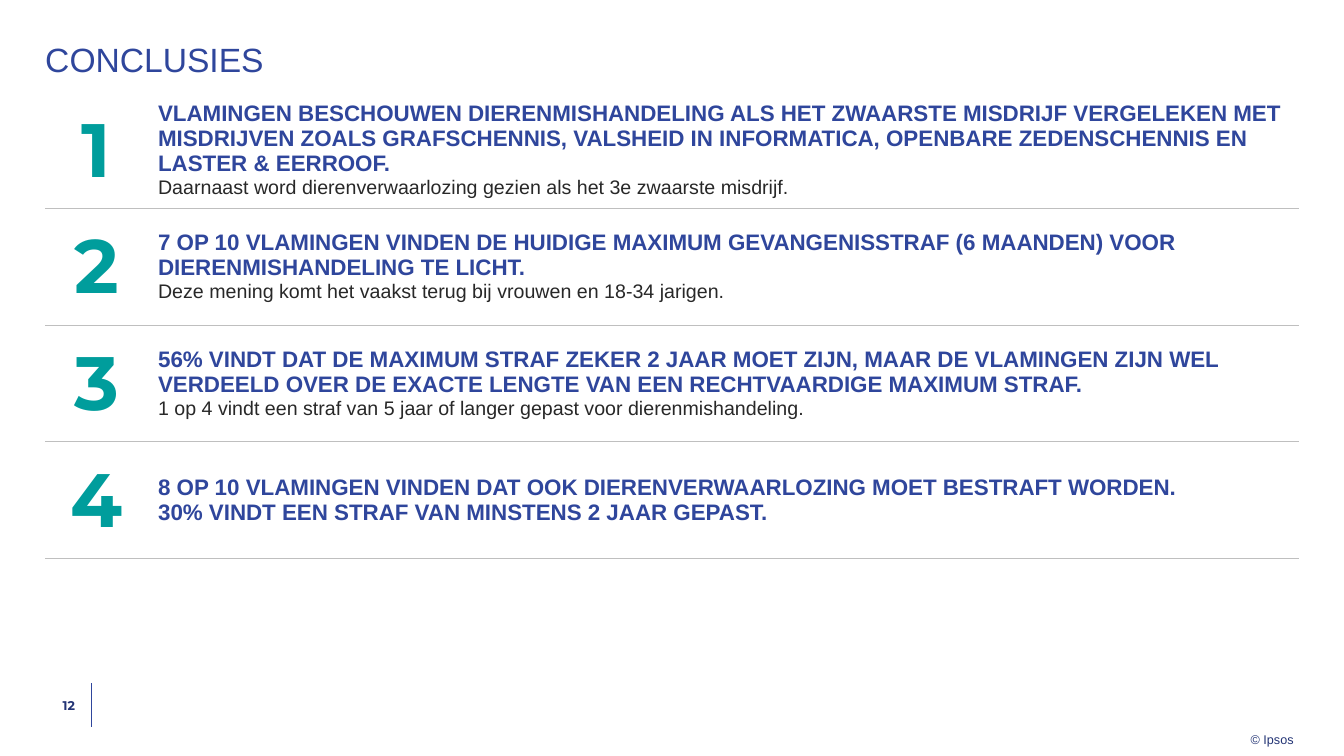
"""Build the conclusions slide: a title, four numbered findings and a footer."""
from dataclasses import dataclass

from lxml import etree
from pptx import Presentation
from pptx.dml.color import RGBColor
from pptx.enum.shapes import MSO_CONNECTOR as Connector
from pptx.enum.text import MSO_ANCHOR as Anchor, PP_ALIGN as Align
from pptx.oxml import parse_xml
from pptx.oxml.ns import nsdecls, qn
from pptx.util import Cm, Pt


@dataclass(frozen=True)
class Theme:
    blue: str = "2F469C"
    navy: str = "233475"
    teal: str = "009D9C"
    ink: str = "282828"
    rule: str = "BFBFBF"
    text_font: str = "Arial"
    number_font: str = "Montserrat"
    title: int = 24
    number: int = 54
    heading: int = 16
    detail: int = 14
    footer: int = 9


theme = Theme()


def write(para, text, *, size, color, font=theme.text_font, bold=False, align=Align.LEFT):
    para.text = text
    para.alignment = align
    for span in para.runs:
        span.font.name = font
        span.font.size = Pt(size)
        span.font.bold = bold
        span.font.color.rgb = RGBColor.from_string(color)


def set_frame(frame, anchor, right=0, top=0, wrap=True):
    frame.margin_left = frame.margin_bottom = 0
    frame.margin_right, frame.margin_top = Cm(right), Cm(top)
    frame.vertical_anchor = anchor
    frame.word_wrap = wrap


findings = [
    ("VLAMINGEN BESCHOUWEN DIERENMISHANDELING ALS HET ZWAARSTE MISDRIJF VERGELEKEN MET "
     "MISDRIJVEN ZOALS GRAFSCHENNIS, VALSHEID IN INFORMATICA, OPENBARE ZEDENSCHENNIS EN "
     "LASTER & EERROOF.",
     "Daarnaast word dierenverwaarlozing gezien als het 3e zwaarste misdrijf."),
    ("7 OP 10 VLAMINGEN VINDEN DE HUIDIGE MAXIMUM GEVANGENISSTRAF (6 MAANDEN) VOOR "
     "DIERENMISHANDELING TE LICHT.",
     "Deze mening komt het vaakst terug bij vrouwen en 18-34 jarigen."),
    ("56% VINDT DAT DE MAXIMUM STRAF ZEKER 2 JAAR MOET ZIJN, MAAR DE VLAMINGEN ZIJN WEL "
     "VERDEELD OVER DE EXACTE LENGTE VAN EEN RECHTVAARDIGE MAXIMUM STRAF.",
     "1 op 4 vindt een straf van 5 jaar of langer gepast voor dierenmishandeling."),
    ("8 OP 10 VLAMINGEN VINDEN DAT OOK DIERENVERWAARLOZING MOET BESTRAFT WORDEN.\n"
     "30% VINDT EEN STRAF VAN MINSTENS 2 JAAR GEPAST.", None),
]

deck = Presentation()
deck.slide_width, deck.slide_height = Cm(33.87), Cm(19.05)
page = deck.slides.add_slide(deck.slide_layouts[5])
left, width = Cm(1.14), Cm(31.6)

title = page.shapes.title
title.left, title.top, title.width, title.height = left, Cm(1.02), width, Cm(1.07)
set_frame(title.text_frame, Anchor.MIDDLE)
heading = title.text_frame.paragraphs[0]
write(heading, "CONCLUSIES", size=theme.title, color=theme.blue)
heading.line_spacing = 0.9

row_height, number_width = Cm(2.94), Cm(2.59)
table = page.shapes.add_table(len(findings), 2, left, Cm(2.31), width,
                              row_height * len(findings)).table
table.first_row = table.horz_banding = False
table._tbl.tblPr.find(qn("a:tableStyleId")).text = "{2D5ABB26-0587-4C30-8999-92F81FD0307C}"
table.columns[0].width = number_width
table.columns[1].width = width - number_width

for index, (claim, detail) in enumerate(findings):
    table.rows[index].height = row_height
    number_cell, text_cell = table.rows[index].cells
    number_cell.margin_left = number_cell.margin_right = 0
    number_cell.margin_top = number_cell.margin_bottom = 0
    write(number_cell.text_frame.paragraphs[0], str(index + 1), size=theme.number,
          color=theme.teal, font=theme.number_font, bold=True, align=Align.CENTER)
    write(text_cell.text_frame.paragraphs[0], claim, size=theme.heading,
          color=theme.blue, bold=True)
    if detail:
        write(text_cell.text_frame.add_paragraph(), detail, size=theme.detail, color=theme.ink)
    for cell in (number_cell, text_cell):
        cell.vertical_anchor = Anchor.MIDDLE
        cell.fill.background()
        cell._tc.tcPr.insert(0, parse_xml(
            f'<a:lnB {nsdecls("a")} w="{Pt(0.5)}"><a:solidFill>'
            f'<a:srgbClr val="{theme.rule}"/></a:solidFill></a:lnB>'))

footer_top, footer_height, divider_left = Cm(17.22), Cm(1.1), Cm(2.29)
divider = page.shapes.add_connector(Connector.STRAIGHT, divider_left, footer_top,
                                    divider_left, footer_top + footer_height)
divider.line.color.rgb = RGBColor.from_string(theme.blue)
divider.line.width = Pt(0.5)
etree.SubElement(divider._element.spPr, qn("a:effectLst"))

page_number = page.shapes.add_textbox(left, footer_top, divider_left - left, footer_height)
set_frame(page_number.text_frame, Anchor.MIDDLE, right=0.4)
write(page_number.text_frame.paragraphs[0], "12", size=theme.footer, color=theme.navy,
      font=theme.number_font, bold=True, align=Align.RIGHT)

copyright_line = page.shapes.add_textbox(Cm(31.52), Cm(18.34), Cm(1.09), Cm(0.48))
set_frame(copyright_line.text_frame, Anchor.TOP, top=0.1, wrap=False)
write(copyright_line.text_frame.paragraphs[0], "© Ipsos", size=theme.footer, color=theme.navy)

deck.save("out.pptx")
